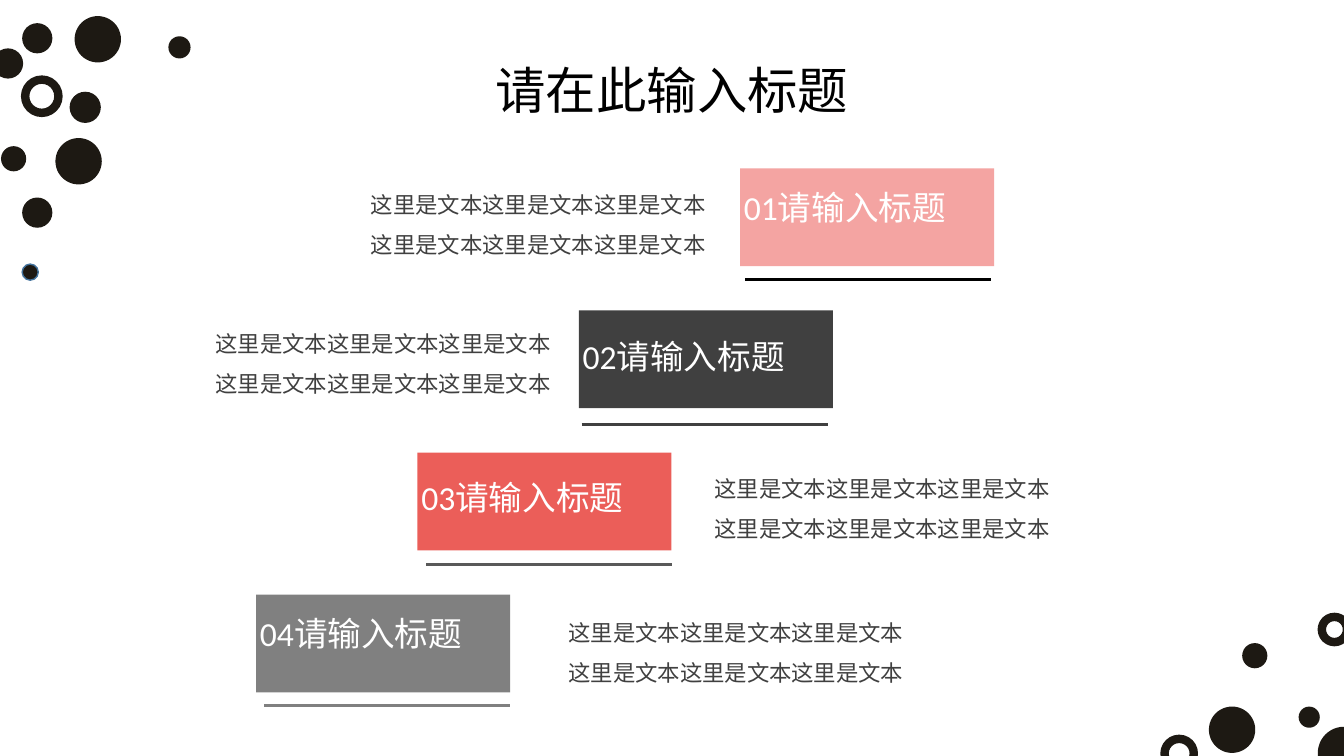
from lxml.etree import SubElement
from pptx import Presentation
from pptx.dml.color import RGBColor as RGB
from pptx.enum.shapes import MSO_CONNECTOR as LINK, MSO_SHAPE as SHAPE
from pptx.enum.text import PP_ALIGN as ALIGN
from pptx.oxml.ns import qn
from pptx.util import Inches, Pt

HEX = {
    "ink": "1D1913", "rim": "43739E", "black": "000000", "white": "FFFFFF",
    "pink": "F4A4A2", "dark": "404040", "red": "EB5E59",
    "slate": "595959", "gray": "808080",
}
CJK = "Noto Sans CJK SC"

deck = Presentation()
deck.slide_width, deck.slide_height = Inches(13.33), Inches(7.5)
slide = deck.slides.add_slide(deck.slide_layouts[6])
shapes = slide.shapes


def add_text(x, y, w, h, text, size, color):
    """Add a wrapped text box and return its only paragraph."""
    frame = shapes.add_textbox(*map(Inches, (x, y, w, h))).text_frame
    frame.word_wrap = True
    para = frame.paragraphs[0]
    para.text = text
    font = para.font
    font.size, font.name = Pt(size), CJK
    font.color.rgb = RGB.from_string(HEX[color])
    SubElement(font._rPr, qn("a:ea"), typeface=CJK)
    return para


def add_shape(kind, x, y, w, h, fill=None, line=None, width=1):
    """Add a flat shape; without a fill or line color that part is empty."""
    shape = shapes.add_shape(kind, *map(Inches, (x, y, w, h)))
    shape.shadow.inherit = False
    for part, color in ((shape.fill, fill), (shape.line.fill, line)):
        if color:
            part.solid()
            part.fore_color.rgb = RGB.from_string(HEX[color])
        else:
            part.background()
    if line:
        shape.line.width = Pt(width)


# Corner dots and rings: left, top, diameter
dots = [
    (1.67, 0.36, 0.22), (0.01, 1.45, 0.25), (0.69, 0.91, 0.31),
    (-0.07, 0.48, 0.3), (0.74, 0.16, 0.46), (0.22, 1.96, 0.3),
    (0.22, 0.23, 0.3), (0.55, 1.37, 0.46), (13.07, 7.21, 0.52),
    (11.99, 7.01, 0.46), (12.88, 7.01, 0.21), (12.32, 6.38, 0.25),
]
rings = [(0.25, 0.79, 0.33), (11.55, 7.33, 0.29), (13.11, 6.12, 0.25)]
for x, y, d in dots:
    add_shape(SHAPE.OVAL, x, y, d, d, "ink")
for x, y, d in rings:
    add_shape(SHAPE.OVAL, x, y, d, d, line="ink", width=6)
add_shape(SHAPE.OVAL, 0.22, 2.62, 0.16, 0.16, "ink", "rim")

title = add_text(4.03, 0.54, 5.27, 0.71, "请在此输入标题", 36, "black")
title.alignment = ALIGN.CENTER

# Card fill, heading top, rule color, rule start, body place
steps = [
    ("pink", 1.81, "black", (7.39, 2.77), (3.58, 1.71)),
    ("dark", 3.28, "dark", (5.77, 4.21), (2.04, 3.09)),
    ("red", 4.68, "slate", (4.23, 5.6), (6.99, 4.53)),
    ("gray", 6.03, "gray", (2.62, 7), (5.54, 5.96)),
]
for i, (fill, top, color, (x, y), body) in enumerate(steps):
    left = 7.34 - 1.6 * i
    add_shape(SHAPE.RECTANGLE, left, 1.67 + 1.41 * i, 2.52, 0.97, fill)

    head = add_text(left - 0.06, top, 2.58, 0.57, "", 24, "white")
    num = head.add_run()
    num.text = f"{i + 1:02}"
    num.font.name = "Calibri"
    head.add_run().text = "请输入标题"

    rule = shapes.add_connector(
        LINK.STRAIGHT, Inches(x), Inches(y), Inches(x + 2.44), Inches(y))
    rule.line.width = Pt(2.25)
    rule.line.color.rgb = RGB.from_string(HEX[color])
    SubElement(rule._element.spPr, qn("a:effectLst"))

    note = add_text(*body, 3.7, 0.86, "这里是文本" * 6, 16, "dark")
    note.line_spacing = 1.5

deck.save("out.pptx")
